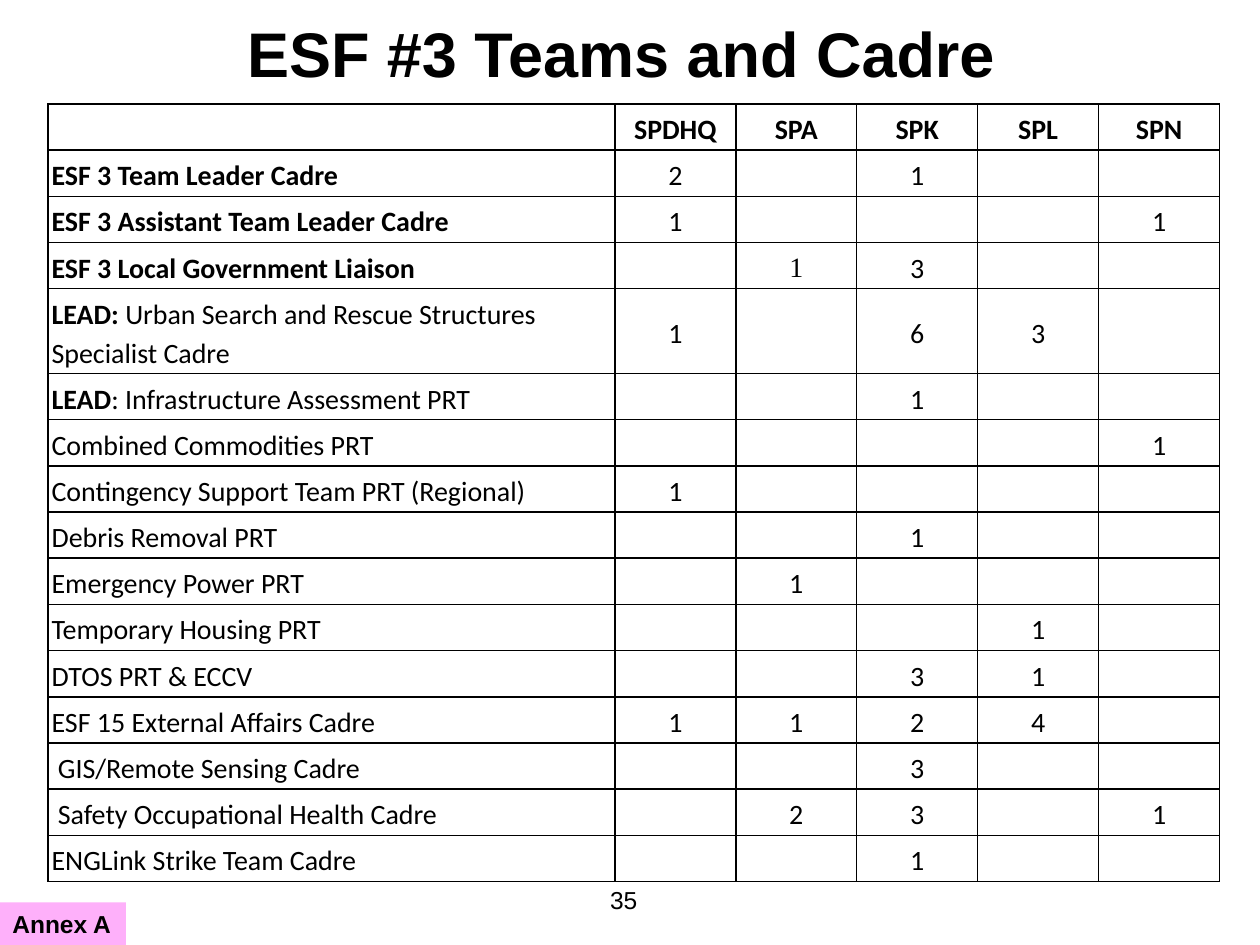
from dataclasses import dataclass

from lxml import etree
from pptx import Presentation
from pptx import util as u
from pptx.dml.color import RGBColor
from pptx.enum import shapes, text
from pptx.oxml.ns import qn


@dataclass(frozen=True)
class Theme:
    """Colours, fonts and type sizes of the slide."""
    ink: str = "000000"
    pink: str = "FEB0FA"
    head: str = "Arial"
    body: str = "Calibri"
    serif: str = "Times New Roman"
    big: int = 36
    mid: int = 16
    small: int = 14


LOOK = Theme()
WIDE, HIGH = u.Inches(10), u.Inches(7.5)
MID, LEFT = text.PP_ALIGN.CENTER, text.PP_ALIGN.LEFT
PAD = u.Inches(0.03)
INDENT = u.Inches(0.05)
UNITS = ["SPDHQ", "SPA", "SPK", "SPL", "SPN"]
TEAMS = [
    ("ESF 3 Team Leader Cadre", "", "2 - 1 - -"),
    ("ESF 3 Assistant Team Leader Cadre", "", "1 - - - 1"),
    ("ESF 3 Local Government Liaison", "", "- 1 3 - -"),
    ("LEAD: ", "Urban Search and Rescue Structures Specialist Cadre", "1 - 6 3 -"),
    ("LEAD", ": Infrastructure Assessment PRT", "- - 1 - -"),
    ("", "Combined Commodities PRT", "- - - - 1"),
    ("", "Contingency Support Team PRT (Regional)", "1 - - - -"),
    ("", "Debris Removal PRT", "- - 1 - -"),
    ("", "Emergency Power PRT", "- 1 - - -"),
    ("", "Temporary Housing PRT", "- - - 1 -"),
    ("", "DTOS PRT & ECCV", "- - 3 1 -"),
    ("", "ESF 15 External Affairs Cadre", "1 1 2 4 -"),
    ("", "GIS/Remote Sensing Cadre", "- - 3 - -"),
    ("", "Safety Occupational Health Cadre", "- 2 3 - 1"),
    ("", "ENGLink Strike Team Cadre", "- - 1 - -"),
]
INSET = {"GIS/Remote Sensing Cadre", "Safety Occupational Health Cadre"}
SERIF = ("ESF 3 Local Government Liaison", "SPA")


def place(x, y, w, h):
    """Turn shares of the slide into lengths."""
    return int(x * WIDE), int(y * HIGH), int(w * WIDE), int(h * HIGH)


def write(para, words, size, face, bold=False):
    """Add one run to a paragraph."""
    run = para.add_run()
    run.text = words
    run.font.size, run.font.name, run.font.bold = u.Pt(size), face, bold
    run.font.color.rgb = RGBColor.from_string(LOOK.ink)


def label(slide, box, words, size, bold, anchor):
    """Place a centred line of text in the box."""
    frame = slide.shapes.add_textbox(*box).text_frame
    frame.word_wrap, frame.vertical_anchor = True, anchor
    para = frame.paragraphs[0]
    para.alignment = MID
    write(para, words, size, LOOK.head, bold)


def tag(slide, box):
    """Place the annex tag in the box."""
    shape = slide.shapes.add_shape(shapes.MSO_SHAPE.RECTANGLE, *box)
    shape.shadow.inherit = False
    shape.fill.solid()
    shape.fill.fore_color.rgb = RGBColor.from_string(LOOK.pink)
    shape.line.fill.background()
    frame = shape.text_frame
    frame.word_wrap = False
    frame.auto_size = text.MSO_AUTO_SIZE.SHAPE_TO_FIT_TEXT
    frame.vertical_anchor = text.MSO_ANCHOR.TOP
    frame.paragraphs[0].alignment = LEFT
    write(frame.paragraphs[0], "Annex A", LOOK.small, LOOK.head, True)


def rule(cell):
    """Draw the four borders of a cell."""
    props = cell._tc.get_or_add_tcPr()
    for spot, side in enumerate(("lnL", "lnR", "lnT", "lnB")):
        line = etree.Element(qn("a:" + side), w=str(u.Pt(1)))
        fill = etree.SubElement(line, qn("a:solidFill"))
        etree.SubElement(fill, qn("a:srgbClr"), val=LOOK.ink)
        props.insert(spot, line)


def fill(cell, runs, align, anchor, face):
    """Style a cell and write its runs."""
    cell.fill.background()
    rule(cell)
    cell.margin_left = cell.margin_right = PAD
    cell.margin_top = cell.margin_bottom = PAD
    cell.vertical_anchor = anchor
    runs = [(words, bold) for words, bold in runs if words]
    if not runs:
        return
    para = cell.text_frame.paragraphs[0]
    para.alignment, para.line_spacing = align, 1.15
    if runs[0][0] in INSET:
        para._p.get_or_add_pPr().set("marL", str(INDENT))
    for words, bold in runs:
        write(para, words, LOOK.mid, face, bold)


def roster(slide, box):
    """Place the table of teams by unit in the box."""
    grid = slide.shapes.add_table(len(TEAMS) + 1, len(UNITS) + 1, *box).table
    grid.first_row = grid.horz_banding = False
    unit = u.Inches(0.96)
    for col in grid.columns:
        col.width = unit
    grid.columns[0].width = box[2] - unit * len(UNITS)
    for row in grid.rows:
        row.height = u.Inches(0.34)
    grid.rows[4].height = u.Inches(0.55)
    mid, low = text.MSO_ANCHOR.MIDDLE, text.MSO_ANCHOR.BOTTOM
    fill(grid.cell(0, 0), [], LEFT, low, LOOK.body)
    for c, name in enumerate(UNITS, 1):
        fill(grid.cell(0, c), [(name, True)], MID, mid, LOOK.body)
    for r, (lead, rest, counts) in enumerate(TEAMS, 1):
        fill(grid.cell(r, 0), [(lead, True), (rest, False)], LEFT, low, LOOK.body)
        for c, count in enumerate(counts.split(), 1):
            face = LOOK.serif if (lead, UNITS[c - 1]) == SERIF else LOOK.body
            fill(grid.cell(r, c), [(count.strip("-"), False)], MID, mid, face)


def main():
    """Build and save the slide."""
    deck = Presentation()
    deck.slide_width, deck.slide_height = WIDE, HIGH
    slide = deck.slides.add_slide(deck.slide_layouts[6])
    label(slide, place(0.38, 0.93, 0.23, 0.07), "35", LOOK.small, False,
          text.MSO_ANCHOR.TOP)
    label(slide, place(0.043, 0, 0.9, 0.11), "ESF #3 Teams and Cadre", LOOK.big,
          True, text.MSO_ANCHOR.MIDDLE)
    roster(slide, place(0.038, 0.11, 0.93, 0.82))
    tag(slide, place(0, 0.955, 0.1, 0.045))
    deck.save("out.pptx")


if __name__ == "__main__":
    main()
